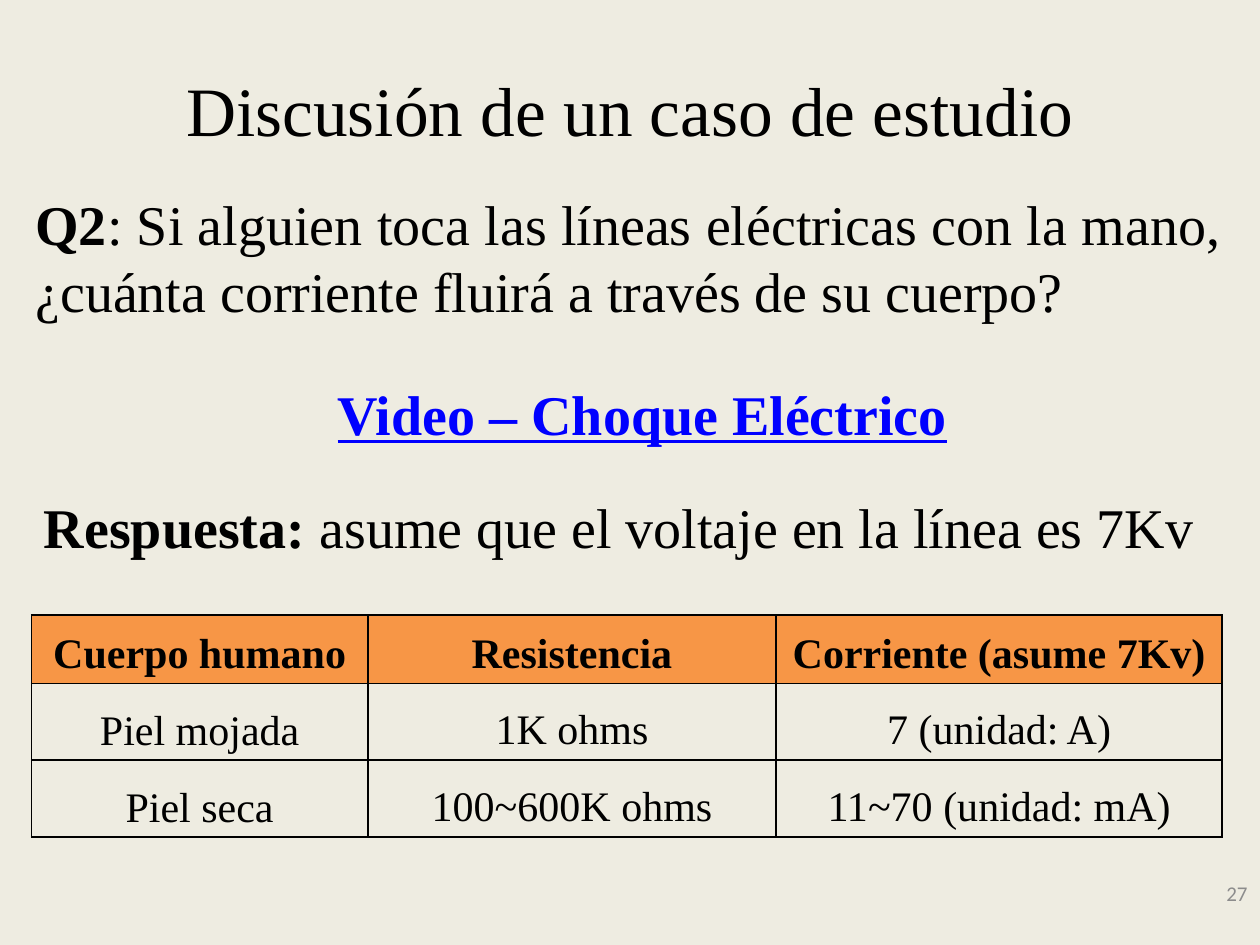
from dataclasses import dataclass

from lxml.etree import SubElement
from pptx import Presentation
from pptx.dml.color import RGBColor
from pptx.enum.text import MSO_ANCHOR, MSO_AUTO_SIZE, PP_ALIGN
from pptx.oxml.ns import qn
from pptx.util import Pt


@dataclass(frozen=True)
class Theme:
    font: str = "Times New Roman"
    number_font: str = "Calibri"
    background: str = "EEECE1"
    ink: str = "000000"
    link: str = "0000FF"
    header: str = "F79646"
    muted: str = "8C8C8C"
    title_size: float = 39.6
    body_size: float = 32
    table_size: float = 24
    number_size: float = 12


THEME = Theme()

TITLE = "Discusión de un caso de estudio"
QUESTION = [
    ("Q2", True),
    (": Si alguien toca las líneas eléctricas con la mano, "
     "¿cuánta corriente fluirá a través de su cuerpo?", False),
]
VIDEO = [("Video – Choque Eléctrico", True)]
ANSWER = [("Respuesta: ", True), ("asume que el voltaje en la línea es 7Kv", False)]
PAGE_NUMBER = [("27", False)]
ROWS = [
    ("Cuerpo humano", "Resistencia", "Corriente (asume 7Kv)"),
    ("Piel mojada", "1K ohms", "7 (unidad: A)"),
    ("Piel seca", "100~600K ohms", "11~70 (unidad: mA)"),
]
COLUMN_WIDTHS = [192.2, 233.3, 254.9]
ROW_HEIGHTS = [39, 43.8, 43.8]


def style(span, size, color=THEME.ink, bold=False, font=THEME.font):
    span.font.name = font
    span.font.size = Pt(size)
    span.font.bold = bold
    span.font.color.rgb = RGBColor.from_string(color)


def add_text(page, spans, area, size=THEME.body_size, color=THEME.ink,
             font=THEME.font, wrap=False, align=PP_ALIGN.LEFT):
    box = page.shapes.add_textbox(*(Pt(value) for value in area))
    frame = box.text_frame
    frame.word_wrap = wrap
    para = frame.paragraphs[0]
    para.alignment = align
    for words, bold in spans:
        span = para.add_run()
        span.text = words
        style(span, size, color, bold, font)
    return box


def add_borders(cell):
    properties = cell._tc.get_or_add_tcPr()
    for position, side in enumerate(("lnL", "lnR", "lnT", "lnB")):
        line = SubElement(properties, qn(f"a:{side}"), w=str(Pt(1)))
        fill = SubElement(line, qn("a:solidFill"))
        SubElement(fill, qn("a:srgbClr"), val=THEME.ink)
        properties.insert(position, line)


def fill_cell(cell, words, row, column):
    is_header = row == 0
    is_label = row > 0 and column == 0
    cell.text_frame.text = words
    cell.vertical_anchor = MSO_ANCHOR.MIDDLE
    cell.margin_left = cell.margin_right = Pt(7.2)
    cell.margin_top = Pt(13.7 if is_header else 18.7 if is_label else 17.3)
    cell.margin_bottom = Pt(3.6)
    para = cell.text_frame.paragraphs[0]
    para.alignment = PP_ALIGN.CENTER
    para.line_spacing = 0.74 if is_label else 0.76
    style(para.runs[0], THEME.table_size, bold=is_header)
    if is_header:
        cell.fill.solid()
        cell.fill.fore_color.rgb = RGBColor.from_string(THEME.header)
    else:
        cell.fill.background()
    add_borders(cell)


def add_results(page):
    table = page.shapes.add_table(
        len(ROWS), len(COLUMN_WIDTHS), Pt(18), Pt(351.4),
        Pt(sum(COLUMN_WIDTHS)), Pt(sum(ROW_HEIGHTS))).table
    table.horz_banding = False
    for column, width in zip(table.columns, COLUMN_WIDTHS):
        column.width = Pt(width)
    for row, height in zip(table.rows, ROW_HEIGHTS):
        row.height = Pt(height)
    for row, texts in enumerate(ROWS):
        for column, words in enumerate(texts):
            fill_cell(table.cell(row, column), words, row, column)


def add_title(page):
    title = page.shapes.title
    title.left, title.top, title.width, title.height = Pt(36), Pt(39.6), Pt(648), Pt(44.6)
    frame = title.text_frame
    frame.text = TITLE
    frame.auto_size = MSO_AUTO_SIZE.NONE
    frame.vertical_anchor = MSO_ANCHOR.MIDDLE
    para = frame.paragraphs[0]
    para.alignment = PP_ALIGN.CENTER
    style(para.runs[0], THEME.title_size)


def main():
    deck = Presentation()
    deck.slide_width, deck.slide_height = Pt(720), Pt(540)
    page = deck.slides.add_slide(deck.slide_layouts[5])
    page.background.fill.solid()
    page.background.fill.fore_color.rgb = RGBColor.from_string(THEME.background)

    add_title(page)
    question = add_text(page, QUESTION, (20.2, 108, 678.2, 77.8),
                        wrap=True, align=PP_ALIGN.JUSTIFY).text_frame
    question.margin_left = question.margin_right = 0
    question.margin_top = question.margin_bottom = 0
    add_results(page)
    video = add_text(page, VIDEO, (185.8, 213.1, 366.5, 46.1), color=THEME.link)
    video.text_frame.paragraphs[0].runs[0].font.underline = True
    add_text(page, ANSWER, (18, 277.9, 678.2, 46.1))
    number = add_text(page, PAGE_NUMBER, (558, 496.1, 162, 28.8), THEME.number_size,
                      THEME.muted, THEME.number_font, True, PP_ALIGN.RIGHT)
    number.text_frame.vertical_anchor = MSO_ANCHOR.MIDDLE
    deck.save("out.pptx")


if __name__ == "__main__":
    main()
